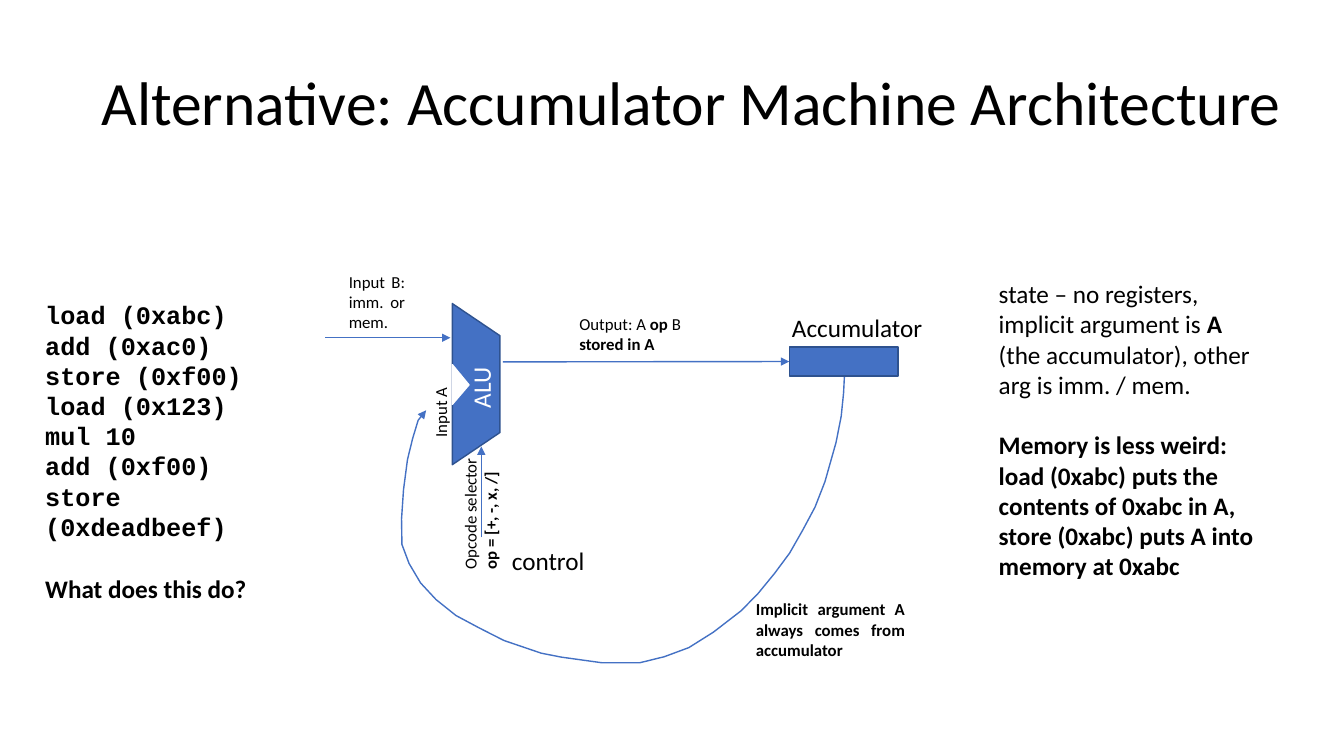
from lxml.etree import SubElement
from pptx import Presentation
from pptx.dml.color import RGBColor
from pptx.enum.shapes import MSO_CONNECTOR, MSO_SHAPE
from pptx.enum.text import MSO_ANCHOR, MSO_AUTO_SIZE, PP_ALIGN
from pptx.oxml.ns import qn
from pptx.util import Cm, Pt

BLUE = RGBColor(0x44, 0x71, 0xC4)
DARK_BLUE = RGBColor(0x2E, 0x52, 0x8F)
BLACK = RGBColor(0, 0, 0)
WHITE = RGBColor(0xFF, 0xFF, 0xFF)

PROGRAM = [
    "load (0xabc)", "add (0xac0)", "store (0xf00)", "load (0x123)",
    "mul 10", "add (0xf00)", "store (0xdeadbeef)",
]

# Corner points in centimetres
ALU_OUTLINE = [(11.4, 7.65), (12.6, 8.46), (12.6, 10.9), (11.4, 11.71)]
ALU_NOTCH = [(11.4, 9.19), (11.82, 9.7), (11.4, 10.19)]
FEEDBACK_CURVE = [
    (21.28, 9.5), (21.26, 9.9), (21.2, 10.49), (21.07, 11.15), (20.79, 12.14),
    (20.54, 12.78), (20.23, 13.36), (19.9, 13.94), (19.52, 14.45),
    (19.11, 14.95), (18.68, 15.39), (17.98, 15.93), (17.36, 16.32),
    (16.74, 16.55), (16.13, 16.7), (15.16, 16.7), (14.15, 16.56),
    (13.64, 16.46), (12.7, 16.14), (12.07, 15.82), (11.49, 15.51),
    (10.99, 15.11), (10.6, 14.69), (10.31, 14.2), (10.13, 13.72),
    (10.12, 13.08), (10.17, 12.34), (10.27, 11.58), (10.4, 11.05),
    (10.54, 10.59), (10.74, 10.34),
]


def set_frame(frame, left=0):
    frame.word_wrap = True
    frame.auto_size = MSO_AUTO_SIZE.NONE
    frame.vertical_anchor = MSO_ANCHOR.TOP
    frame.margin_left = Cm(left)
    frame.margin_top = frame.margin_right = frame.margin_bottom = 0


def set_font(para, size, color=BLACK, bold=None, name="Calibri"):
    para.font.name = name
    para.font.size = Pt(size)
    para.font.bold = bold
    para.font.color.rgb = color


def add_title(page, text):
    title = page.shapes.title
    title.left, title.top = Cm(0.76), Cm(1.6)
    title.width, title.height = Cm(32.33), Cm(1.93)
    title.text = text
    set_frame(title.text_frame, left=1.8)
    para = title.text_frame.paragraphs[0]
    para.alignment = PP_ALIGN.LEFT
    para.line_spacing = 1.0
    set_font(para, 44)


def add_text(page, left, top, width, height, lines, size=18, align=PP_ALIGN.LEFT, **font):
    """Write one paragraph per line; asterisks enclose bold words."""
    box = page.shapes.add_textbox(Cm(left), Cm(top), Cm(width), Cm(height))
    frame = box.text_frame
    set_frame(frame)
    frame.margin_top = Cm(0.06)
    for index, line in enumerate(lines):
        para = frame.add_paragraph() if index else frame.paragraphs[0]
        para.alignment = align
        set_font(para, size, **font)
        for number, words in enumerate(line.split("*")):
            if words:
                span = para.add_run()
                span.text = words
                if number % 2:
                    span.font.bold = True
    return box


def add_upright_text(page, left, top, width, height, lines, spacing, **style):
    box = add_text(page, left, top, width, height, lines, **style)
    box.text_frame.margin_top = 0
    box.text_frame.paragraphs[0].line_spacing = Pt(spacing)
    box.element.txBody.bodyPr.set("vert", "vert270")


def add_outline(page, points, line_color, fill_color=None):
    corners = [(Cm(x), Cm(y)) for x, y in points]
    builder = page.shapes.build_freeform(*corners[0])
    builder.add_line_segments(corners[1:], close=fill_color is not None)
    shape = builder.convert_to_shape()
    set_look(shape, line_color, fill_color)
    return shape


def set_look(shape, line_color, fill_color):
    shape.shadow.inherit = False
    shape.line.color.rgb = line_color
    shape.line.width = Pt(1)
    if fill_color is None:
        shape.fill.background()
    else:
        shape.fill.solid()
        shape.fill.fore_color.rgb = fill_color


def add_arrowhead(shape):
    SubElement(shape.line._get_or_add_ln(), qn("a:tailEnd"), type="triangle")


def add_arrow(page, start, end):
    arrow = page.shapes.add_connector(
        MSO_CONNECTOR.STRAIGHT, *(Cm(value) for value in start + end))
    arrow.line.color.rgb = BLUE
    arrow.line.width = Pt(1)
    add_arrowhead(arrow)
    SubElement(arrow.element.spPr, qn("a:effectLst"))
    return arrow


def main():
    deck = Presentation()
    deck.slide_width, deck.slide_height = Cm(33.87), Cm(19.05)
    page = deck.slides.add_slide(deck.slide_layouts[5])
    add_title(page, "Alternative: Accumulator Machine Architecture")

    # Feedback from the accumulator to input A
    add_arrowhead(add_outline(page, FEEDBACK_CURVE, BLUE))
    add_text(page, 19.05, 15.04, 3.76, 1.6,
             ["Implicit argument A always comes from accumulator"],
             size=12, align=PP_ALIGN.JUSTIFY, bold=True)

    # ALU
    add_outline(page, ALU_OUTLINE, DARK_BLUE, BLUE)
    add_outline(page, ALU_NOTCH, WHITE, WHITE)
    add_upright_text(page, 11.86, 9.14, 0.71, 1.15, ["ALU"], 18.1, color=WHITE)

    # Inputs and control
    add_upright_text(page, 10.92, 9.6, 0.48, 1.42, ["Input A"], 12.4, size=12)
    add_text(page, 8.79, 6.78, 1.42, 1.6, ["Input B: imm. or mem."],
             size=12, align=PP_ALIGN.JUSTIFY)
    add_arrow(page, (8.2, 8.51), (11.35, 8.51))
    add_upright_text(page, 11.66, 11.28, 1.02, 3.07,
                     ["Opcode selector", "*op = [+, -, x, /]*"], 12.4, size=12)
    add_arrow(page, (12.13, 13.54), (12.13, 11.25))
    add_text(page, 12.9, 13.67, 2, 0.84, ["control"])

    # Accumulator and output
    accumulator = page.shapes.add_shape(
        MSO_SHAPE.RECTANGLE, Cm(19.89), Cm(8.74), Cm(2.74), Cm(0.74))
    set_look(accumulator, DARK_BLUE, BLUE)
    add_text(page, 19.96, 7.8, 3.4, 0.84, ["Accumulator"])
    output = add_arrow(page, (12.67, 9.12), (19.89, 9.11))
    output.end_connect(accumulator, 1)
    add_text(page, 14.6, 7.85, 2.8, 1.09,
             ["Output: A *op* B", "*stored in A*"], size=12)

    # Program on the left
    add_text(page, 1.14, 7.49, 5.3, 6.2, PROGRAM, bold=True, name="Courier New")
    add_text(page, 1.14, 14.38, 5.4, 0.84, ["What does this do?"], bold=True)

    # Remarks on the right
    add_text(page, 25.17, 6.96, 6.5, 3.12,
             ["state – no registers, implicit argument is *A* "
              "(the accumulator), other arg is imm. / mem."])
    add_text(page, 25.17, 10.77, 6.55, 3.89,
             ["Memory is less weird: load (0xabc) puts the contents of 0xabc "
              "in A, store (0xabc) puts A into memory at 0xabc"], bold=True)

    deck.save("out.pptx")


if __name__ == "__main__":
    main()
